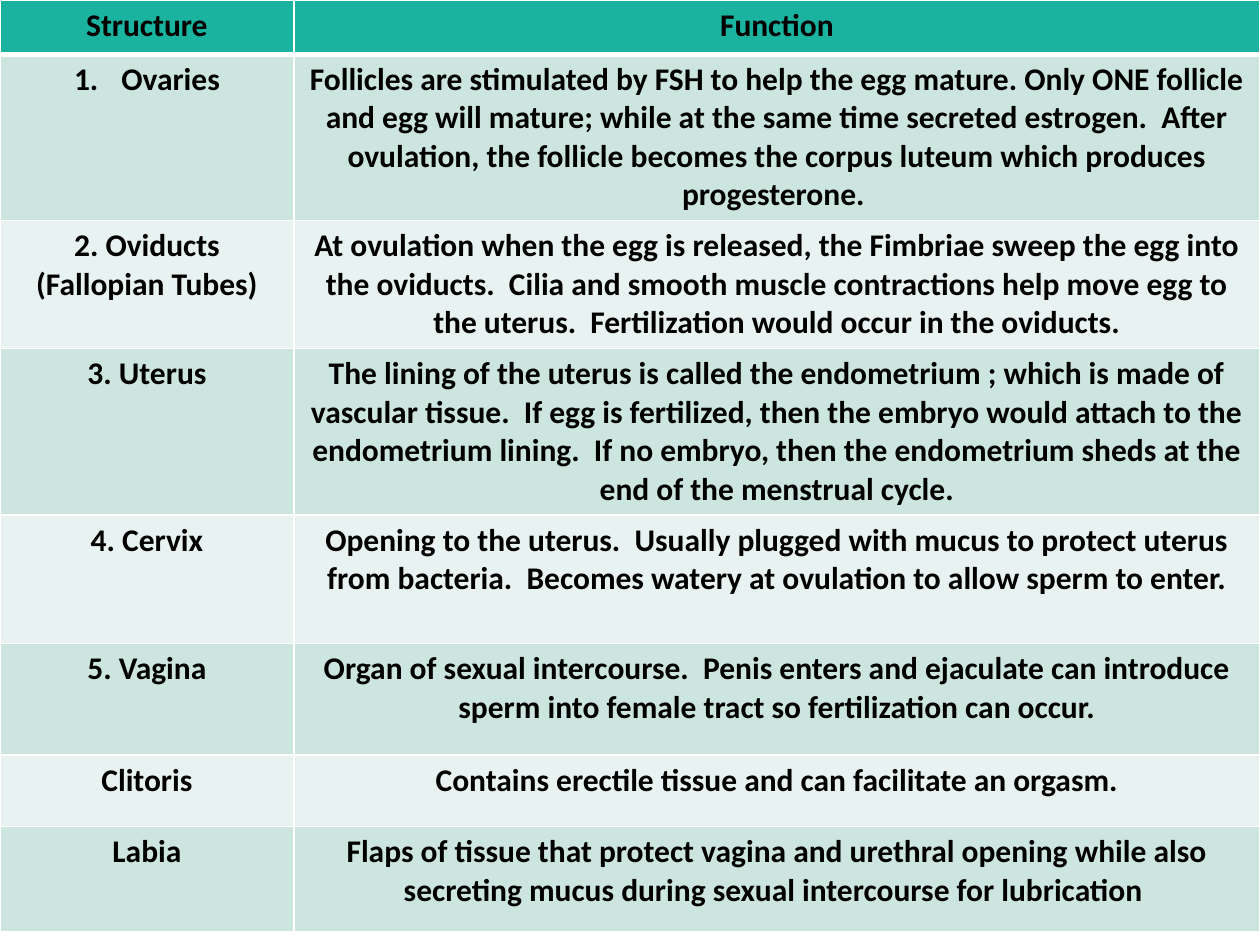
from dataclasses import dataclass

from lxml.etree import SubElement
from pptx import Presentation
from pptx.dml.color import RGBColor
from pptx.enum.text import PP_ALIGN as Align
from pptx.oxml import parse_xml
from pptx.oxml.ns import nsdecls, qn
from pptx.util import Pt


@dataclass(frozen=True)
class Theme:
    font: str = "Calibri"
    size: int = 18
    text: str = "000000"
    header: str = "1AB39F"
    bands: tuple = ("CDE5DF", "E8F2F0")
    border: str = "FFFFFF"
    thin: int = 1
    thick: int = 3


THEME = Theme()
COLUMN_WIDTHS = (168, 552)
TABLE_HEIGHT = 528
NUMBER_INDENT = 27

# Minimum row height, structure, function; rows grow to fit their text
ROWS = (
    (31, "Structure", "Function"),
    (83.5, "Ovaries",
     "Follicles are stimulated by FSH to help the egg mature. Only ONE follicle "
     "and egg will mature; while at the same time secreted estrogen.  After "
     "ovulation, the follicle becomes the corpus luteum which produces "
     "progesterone. "),
    (36.5, "2. Oviducts (Fallopian Tubes)",
     "At ovulation when the egg is released, the Fimbriae sweep the egg into "
     "the oviducts.  Cilia and smooth muscle contractions help move egg to "
     "the uterus.  Fertilization would occur in the oviducts."),
    (39, "3. Uterus",
     "The lining of the uterus is called the endometrium ; which is made of "
     "vascular tissue.  If egg is fertilized, then the embryo would attach to "
     "the endometrium lining.  If no embryo, then the endometrium sheds at the "
     "end of the menstrual cycle."),
    (73.5, "4. Cervix",
     "Opening to the uterus.  Usually plugged with mucus to protect uterus "
     "from bacteria.  Becomes watery at ovulation to allow sperm to enter."),
    (63.5, "5. Vagina",
     "Organ of sexual intercourse.  Penis enters and ejaculate can introduce "
     "sperm into female tract so fertilization can occur."),
    (41, "Clitoris", "Contains erectile tissue and can facilitate an orgasm."),
    (60, "Labia",
     "Flaps of tissue that protect vagina and urethral opening while also "
     "secreting mucus during sexual intercourse for lubrication "),
)


def write_text(para, text, *, size=THEME.size, color=THEME.text, bold=True,
               align=Align.CENTER):
    para.alignment = align
    span = para.add_run()
    span.text = text
    span.font.name = THEME.font
    span.font.size = Pt(size)
    span.font.bold = bold
    span.font.color.rgb = RGBColor.from_string(color)


def number_paragraph(para):
    """Give the paragraph automatic numbering with a hanging indent."""
    properties = para._p.get_or_add_pPr()
    properties.set("marL", str(Pt(NUMBER_INDENT)))
    properties.set("indent", str(-Pt(NUMBER_INDENT)))
    SubElement(properties, qn("a:buFont"), typeface="+mj-lt")
    SubElement(properties, qn("a:buAutoNum"), type="arabicPeriod")


def set_borders(cell, *, top, bottom):
    """Draw the four cell edges; they must come before the fill."""
    properties = cell._tc.get_or_add_tcPr()
    widths = {"L": THEME.thin, "R": THEME.thin, "T": top, "B": bottom}
    for index, (side, width) in enumerate(widths.items()):
        line = parse_xml(
            f'<a:ln{side} {nsdecls("a")} w="{Pt(width)}"><a:solidFill>'
            f'<a:srgbClr val="{THEME.border}"/></a:solidFill></a:ln{side}>')
        properties.insert(index, line)


def fill_cell(cell, text, row_index):
    color = THEME.bands[(row_index - 1) % 2] if row_index else THEME.header
    cell.fill.solid()
    cell.fill.fore_color.rgb = RGBColor.from_string(color)
    # A thick rule separates the header from the first row
    set_borders(cell,
                top=THEME.thick if row_index == 1 else THEME.thin,
                bottom=THEME.thick if row_index == 0 else THEME.thin)
    write_text(cell.text_frame.paragraphs[0], text)


def add_structure_table(page):
    frame = page.shapes.add_table(len(ROWS), len(COLUMN_WIDTHS), Pt(0), Pt(0),
                                  Pt(sum(COLUMN_WIDTHS)), Pt(TABLE_HEIGHT))
    table = frame.table
    for column, width in zip(table.columns, COLUMN_WIDTHS):
        column.width = Pt(width)
    for row_index, (height, *texts) in enumerate(ROWS):
        table.rows[row_index].height = Pt(height)
        for column_index, text in enumerate(texts):
            fill_cell(table.cell(row_index, column_index), text, row_index)
    number_paragraph(table.cell(1, 0).text_frame.paragraphs[0])
    frame.height = Pt(TABLE_HEIGHT)


def main():
    deck = Presentation()
    deck.slide_width, deck.slide_height = Pt(720), Pt(540)
    # Blank layout: the table fills the whole page
    page = deck.slides.add_slide(deck.slide_layouts[6])
    add_structure_table(page)
    deck.save("out.pptx")


if __name__ == "__main__":
    main()
